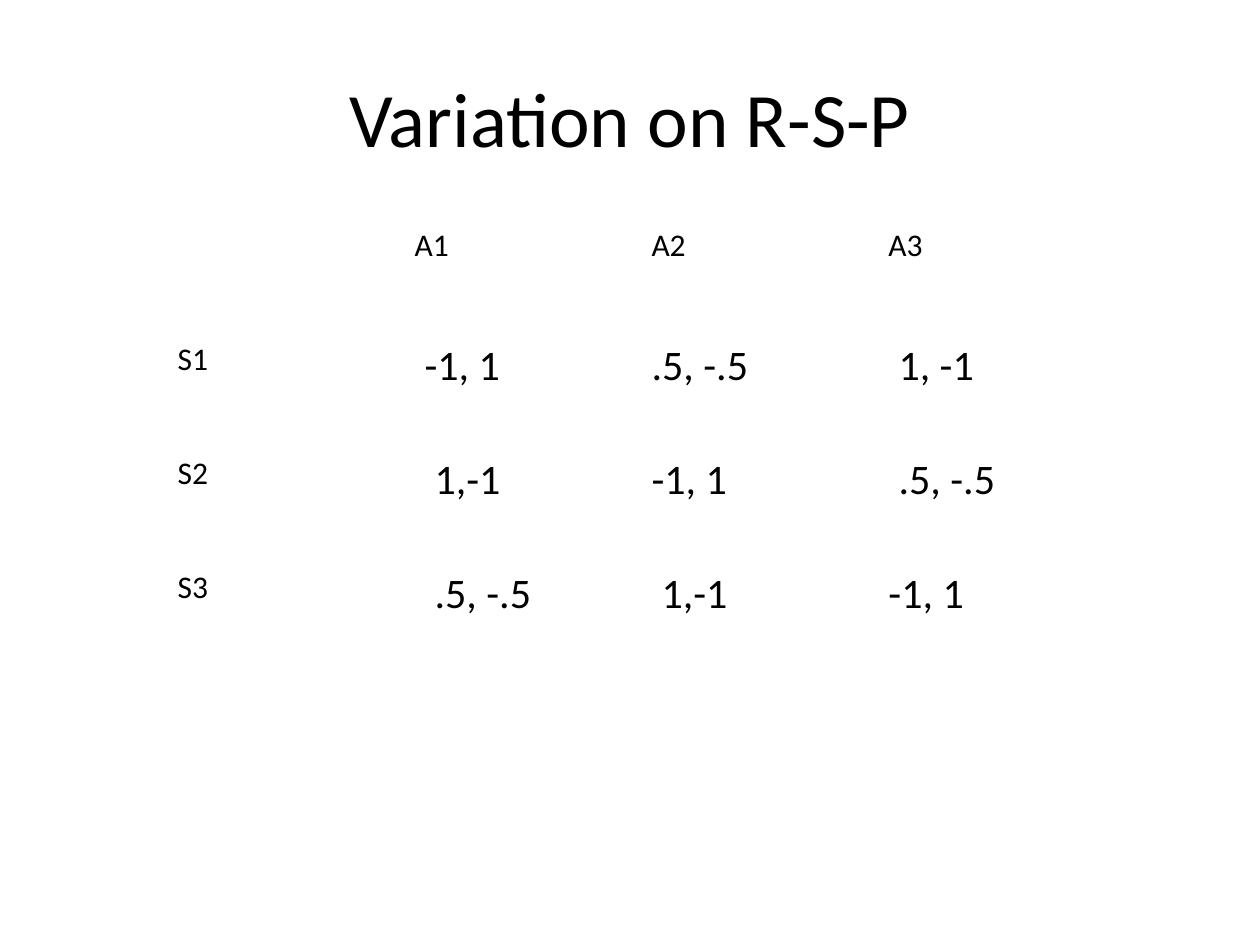
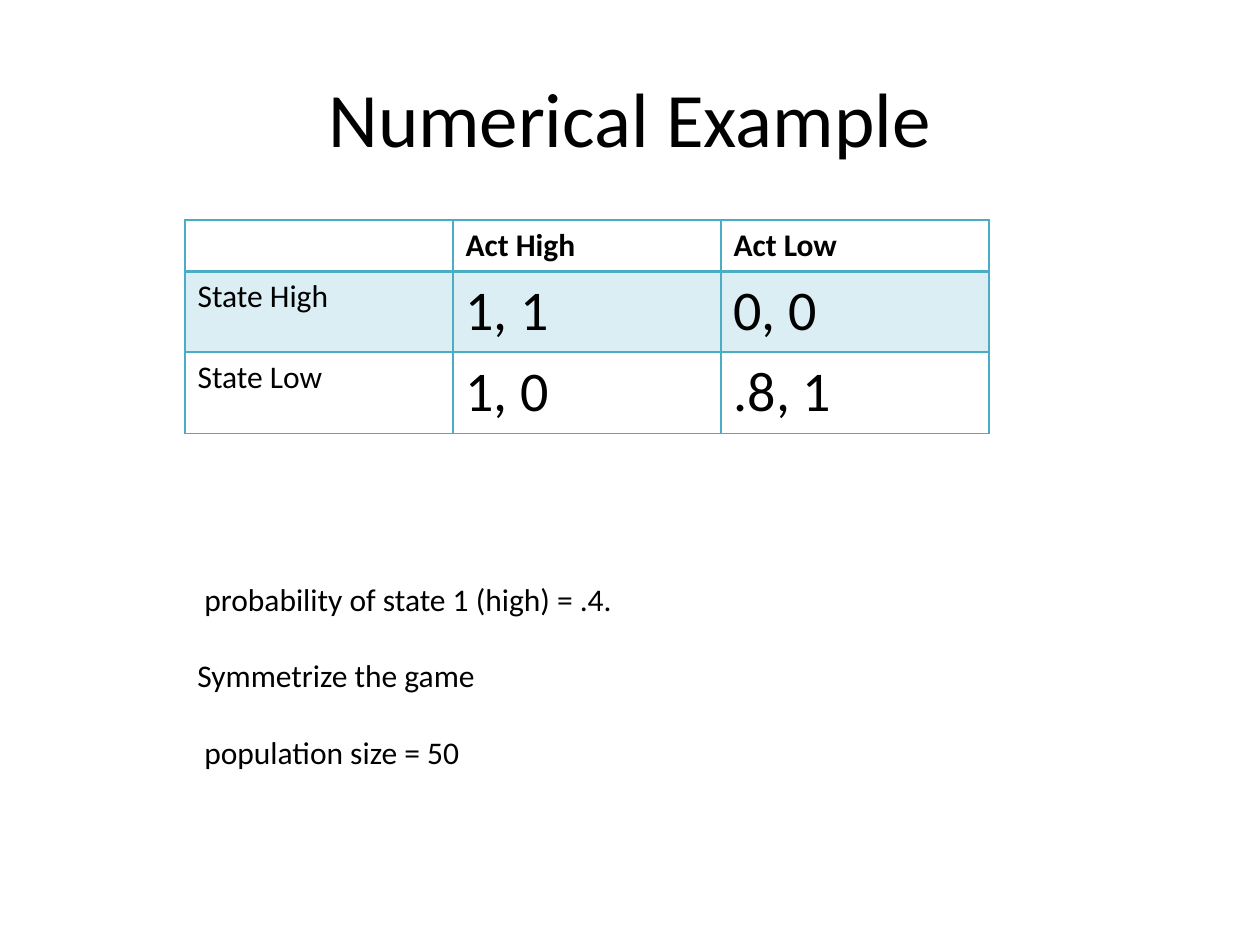
"""Build two game theory slides: a rock-scissors-paper variation and a numerical example."""
import pptx
import pptx.dml.color
import pptx.enum.text
import pptx.oxml
import pptx.oxml.ns
import pptx.util

PX = 914400 / 126
FONT = "Calibri"
INK = "000000"
TEAL = "4BACC6"
PALE_TEAL = "DBEEF4"


def color(hex_code):
    return pptx.dml.color.RGBColor.from_string(hex_code)


def write(paragraph, text, size, bold=False, indent=0):
    paragraph.text = text
    paragraph.font.name = FONT
    paragraph.font.size = pptx.util.Pt(size)
    paragraph.font.bold = bold
    paragraph.font.color.rgb = color(INK)
    if indent:
        paragraph._p.get_or_add_pPr().set("marL", str(round(indent * PX)))


deck = pptx.Presentation()
deck.slide_width = round(1260 * PX)
deck.slide_height = round(945 * PX)

variation_rows = [
    ["", "A1", "A2", "A3"],
    ["S1", "-1, 1", ".5, -.5", "1, -1"],
    ["S2", "1,-1", "-1, 1", ".5, -.5"],
    ["S3", ".5, -.5", "1,-1", "-1, 1"],
]
variation_indents = [[0, 0, 0, 0], [0, 10, 0, 10], [0, 20, 0, 10], [0, 20, 10, 0]]
example_rows = [
    ["", "Act High", "Act Low"],
    ["State High", "1, 1", "0, 0"],
    ["State Low", "1, 0", ".8, 1"],
]
example_indents = [[0] * 3] * 3

games = [
    ("Variation on R-S-P", variation_rows, variation_indents, 165, 237, [114] * 4, 24, False),
    ("Numerical Example", example_rows, example_indents, 185, 268, [51, 81, 81], 32, True),
]

for heading, payoffs, indents, left, column_width, row_heights, payoff_size, ruled in games:
    slide = deck.slides.add_slide(deck.slide_layouts[5])
    title = slide.shapes.title
    title.left, title.top, title.width, title.height = (
        round(length * PX) for length in (63, 38, 1134, 157))
    write(title.text_frame.paragraphs[0], heading, 44)

    matrix = slide.shapes.add_table(
        len(payoffs), len(payoffs[0]), round(left * PX), round(220 * PX),
        round(column_width * len(payoffs[0]) * PX), round(sum(row_heights) * PX)).table
    matrix.first_row = ruled
    matrix.horz_banding = False
    for column in matrix.columns:
        column.width = round(column_width * PX)

    for r, labels in enumerate(payoffs):
        matrix.rows[r].height = round(row_heights[r] * PX)
        for c, label in enumerate(labels):
            cell = matrix.cell(r, c)
            size = payoff_size if r and c else 18
            write(cell.text_frame.paragraphs[0], label, size, ruled and r == 0, indents[r][c])
            if ruled and r == 1:
                cell.fill.solid()
                cell.fill.fore_color.rgb = color(PALE_TEAL)
            else:
                cell.fill.background()
            if not ruled:
                continue
            for position, side in enumerate("LRTB"):
                header_rule = (r, side) in ((0, "B"), (1, "T"))
                border = pptx.oxml.parse_xml(
                    f'<a:ln{side} {pptx.oxml.ns.nsdecls("a")} w="{25400 if header_rule else 12700}">'
                    f'<a:solidFill><a:srgbClr val="{TEAL}"/></a:solidFill></a:ln{side}>')
                cell._tc.get_or_add_tcPr().insert(position, border)

assumptions = slide.shapes.add_textbox(
    *(round(length * PX) for length in (185, 574, 880, 203))).text_frame
assumptions.word_wrap = True
assumptions.auto_size = pptx.enum.text.MSO_AUTO_SIZE.SHAPE_TO_FIT_TEXT
statements = [
    ("probability of state 1 (high) = .4.", 7),
    ("Symmetrize the game", 0),
    ("population size = 50", 7),
]
for index, (statement, indent) in enumerate(statements):
    paragraph = assumptions.add_paragraph() if index else assumptions.paragraphs[0]
    write(paragraph, statement, 18, indent=indent)
    if index:
        paragraph.space_before = pptx.util.Pt(22)

deck.save("out.pptx")
